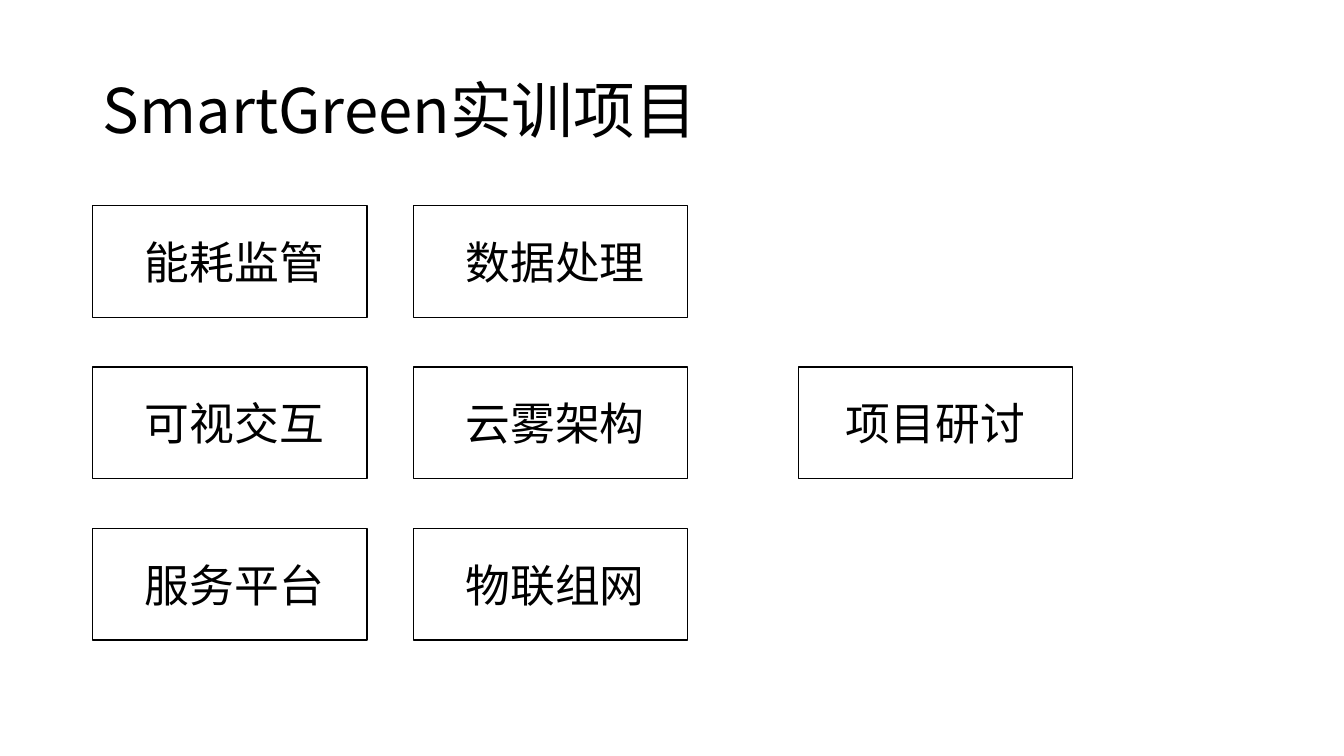
import lxml.etree
import pptx
import pptx.dml.color
import pptx.enum.shapes
import pptx.enum.text
import pptx.oxml.ns
import pptx.util

Inches = pptx.util.Inches
FONT = "Noto Sans CJK SC"
BLACK = "000000"
WHITE = "FFFFFF"
TOP, ROW_STEP = 2.04, 1.6
MODULE_COLUMNS = [
    (0.92, 0, 0.09, ["能耗监管", "可视交互", "服务平台"]),
    (4.1, 0, 0.09, ["数据处理", "云雾架构", "物联组网"]),
    (7.92, 1, 0, ["项目研讨"]),
]


def color(hex_code):
    return pptx.dml.color.RGBColor.from_string(hex_code)


def write(paragraph, words, size, align):
    paragraph.alignment = align
    run = paragraph.add_run()
    run.text = words
    run.font.size = pptx.util.Pt(size)
    run.font.name = FONT
    run.font.color.rgb = color(BLACK)
    east_asian = lxml.etree.SubElement(run.font._element, pptx.oxml.ns.qn("a:ea"))
    east_asian.set("typeface", FONT)


def add_title(slide, words):
    title = slide.shapes.title
    title.left, title.top = Inches(0.92), Inches(0.4)
    title.width, title.height = Inches(11.5), Inches(1.45)
    frame = title.text_frame
    frame.auto_size = pptx.enum.text.MSO_AUTO_SIZE.NONE
    frame.vertical_anchor = pptx.enum.text.MSO_ANCHOR.MIDDLE
    frame.paragraphs[0].line_spacing = 0.9
    write(frame.paragraphs[0], words, 44, pptx.enum.text.PP_ALIGN.LEFT)


def add_module(slide, left, top, extra_inset, words):
    module = slide.shapes.add_shape(
        pptx.enum.shapes.MSO_SHAPE.RECTANGLE,
        Inches(left), Inches(top), Inches(2.72), Inches(1.11))
    module.shadow.inherit = False
    module.fill.solid()
    module.fill.fore_color.rgb = color(WHITE)
    module.line.color.rgb = color(BLACK)
    module.line.width = pptx.util.Pt(1)
    frame = module.text_frame
    frame.margin_left = Inches(0.1 + extra_inset)
    frame.vertical_anchor = pptx.enum.text.MSO_ANCHOR.MIDDLE
    write(frame.paragraphs[0], words, 32, pptx.enum.text.PP_ALIGN.CENTER)


def main():
    """Build the slide of training project modules."""
    deck = pptx.Presentation()
    deck.slide_width, deck.slide_height = Inches(13.33), Inches(7.5)
    slide = deck.slides.add_slide(deck.slide_layouts[5])
    add_title(slide, "SmartGreen实训项目")
    for left, first_row, extra_inset, modules in MODULE_COLUMNS:
        for row, words in enumerate(modules, first_row):
            add_module(slide, left, TOP + row * ROW_STEP, extra_inset, words)
    deck.save("out.pptx")


if __name__ == "__main__":
    main()
